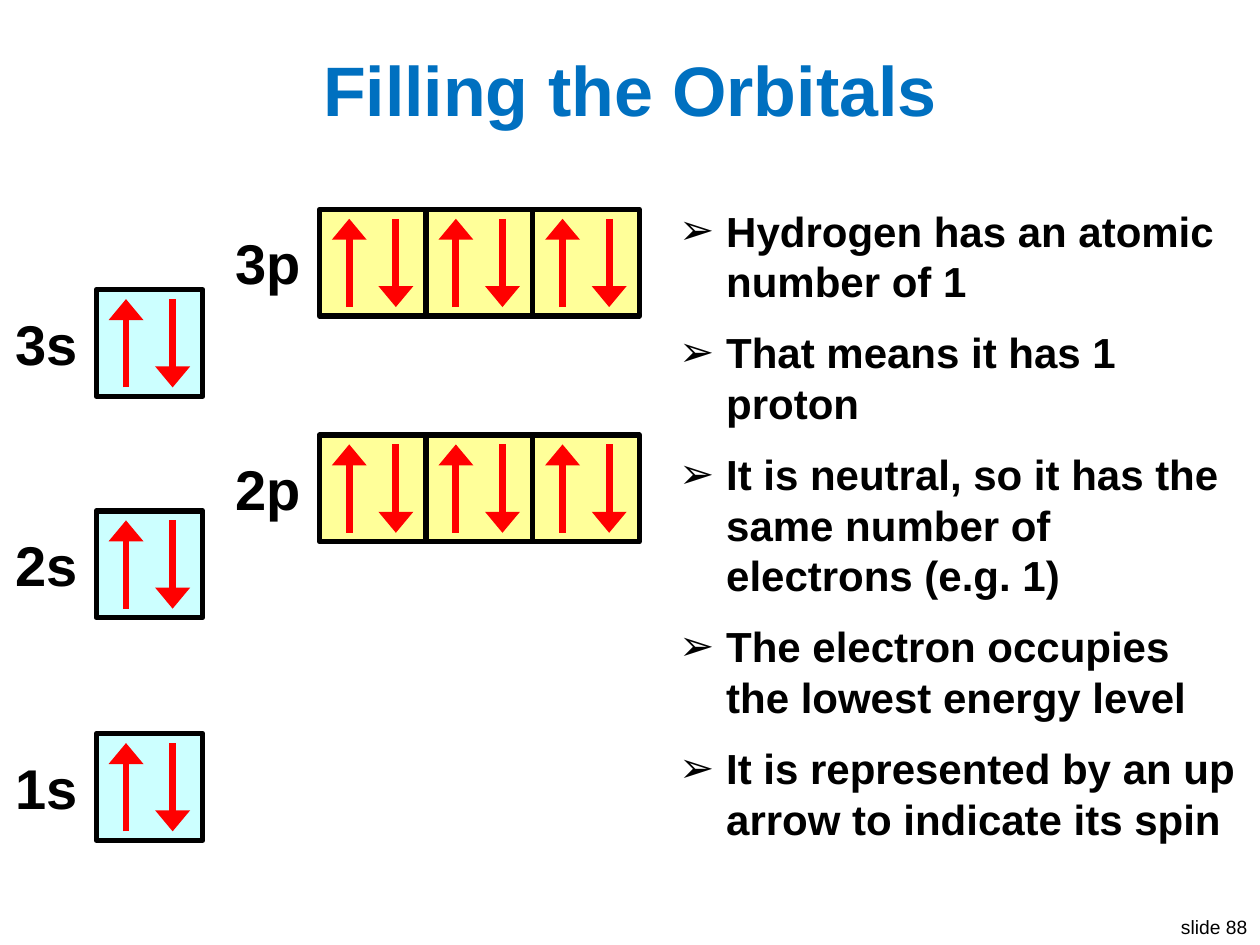
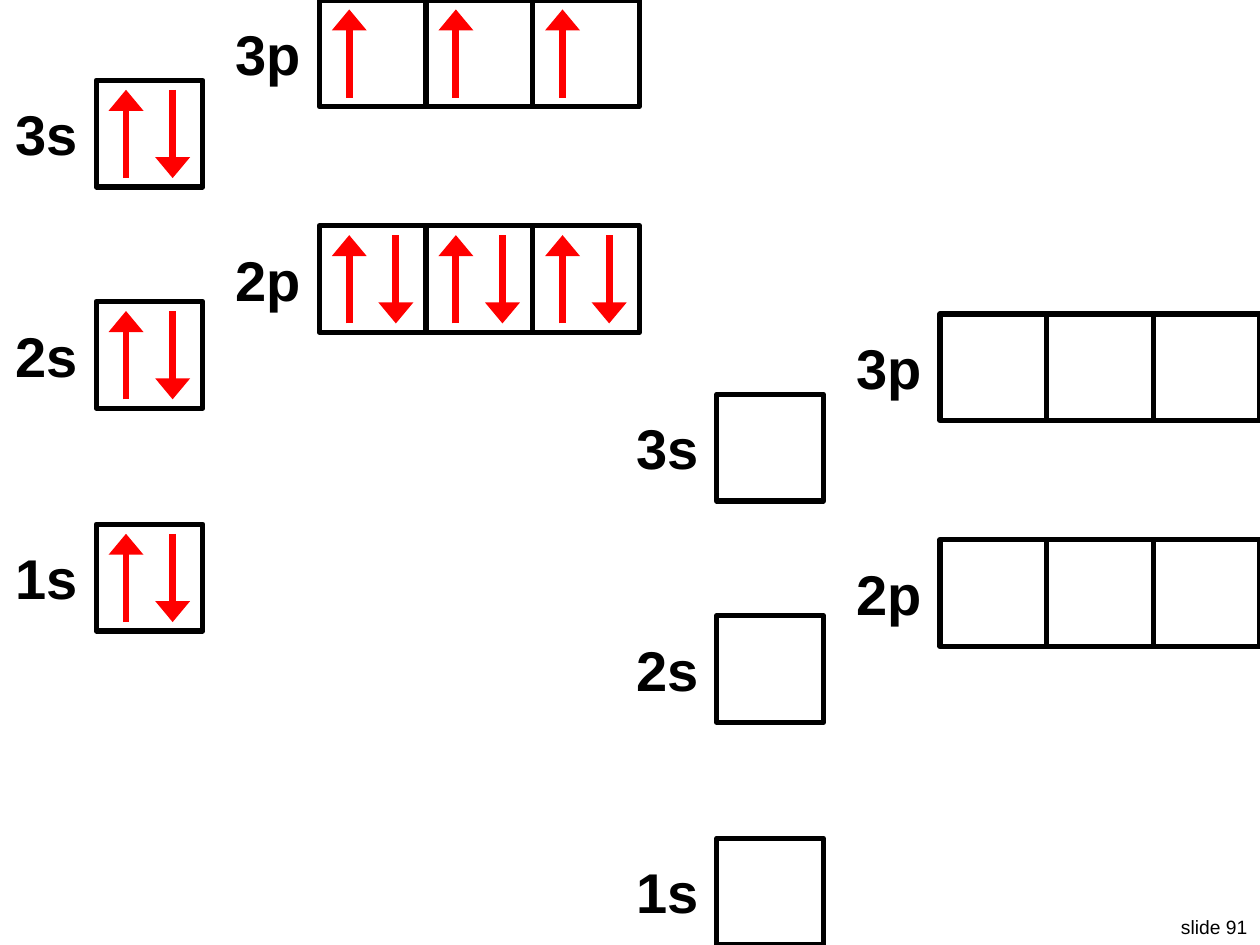
from lxml import etree
from pptx import Presentation
from pptx import util as u
from pptx.dml.color import RGBColor
from pptx.enum import shapes, text
from pptx.oxml import ns

hues = {"title": "0070C0", "ink": "000000", "spin": "FF0000",
        "s": "CCFFFF", "p": "FFFF99", "label": "FFFFFF"}
align = text.PP_ALIGN
fonts = {
    "title": {"size": u.Pt(40), "bold": True},
    "body": {"size": u.Pt(24), "bold": True},
    "label": {"size": u.Pt(32), "bold": True},
    "foot": {"size": u.Pt(11), "bold": False},
}
paras = {
    "title": {"alignment": align.CENTER},
    "body": {"alignment": align.LEFT, "space_before": u.Pt(12)},
    "label": {"alignment": align.RIGHT},
    "foot": {"alignment": align.RIGHT},
}
frames = {
    "title": {"word_wrap": True, "vertical_anchor": text.MSO_ANCHOR.MIDDLE},
    "body": {"word_wrap": True},
    "label": {"word_wrap": False},
    "foot": {"word_wrap": False},
}

# Sublevels: name, left and top within a diagram (cm), number of boxes
levels = [("3s", 1.94, 1.62, 1), ("2s", 1.94, 6.08, 1), ("1s", 1.94, 10.57, 1),
          ("2p", 6.44, 4.55, 3), ("3p", 6.44, 0, 3)]
side = 2.15
widths = {"s": 1.78, "p": 1.84}
full = {"1s": 2, "2s": 2, "2p": 6, "3s": 2, "3p": 6}

# Slides: number, title, bullets, diagrams (left, top, tinted, electrons)
pages = [
    (88, "Filling the Orbitals",
     ["Hydrogen has an atomic number of 1",
      "That means it has 1 proton",
      "It is neutral, so it has the same number of electrons (e.g. 1)",
      "The electron occupies the lowest energy level",
      "It is represented by an up arrow to indicate its spin"],
     [(0, 4.22, True, full)]),
    (91, None, [],
     [(0, 0, False, {**full, "3p": 3}), (12.51, 6.33, False, {})]),
]


def write(home, kind, lines, left, top, wide, high):
    """Add a text box in one of the shared text styles."""
    box = home.add_textbox(u.Cm(left), u.Cm(top), u.Cm(wide), u.Cm(high))
    frame = box.text_frame
    frame.text = "\n".join(lines)
    for key, val in frames[kind].items():
        setattr(frame, key, val)
    for para in frame.paragraphs:
        for key, val in paras[kind].items():
            setattr(para, key, val)
        font = para.runs[0].font
        for key, val in fonts[kind].items():
            setattr(font, key, val)
        font.name = "Arial"
        font.color.rgb = RGBColor.from_string(hues["title" if kind == "title" else "ink"])
    return box


def spin(home, x, start, end):
    """Add a vertical electron arrow with a broad head."""
    arrow = home.add_connector(shapes.MSO_CONNECTOR.STRAIGHT,
                               u.Cm(x), u.Cm(start), u.Cm(x), u.Cm(end))
    arrow.line.width = u.Pt(4)
    arrow.line.color.rgb = RGBColor.from_string(hues["spin"])
    tip = etree.SubElement(arrow.line._get_or_add_ln(), ns.qn("a:tailEnd"))
    tip.set("type", "triangle")
    tip.set("w", "lg")
    etree.SubElement(arrow._element.spPr, ns.qn("a:effectLst"))


deck = Presentation()
deck.slide_width, deck.slide_height = u.Cm(25.4), u.Cm(19.05)

for num, title, points, charts in pages:
    slide = deck.slides.add_slide(deck.slide_layouts[6])

    # Footer and title
    write(slide.shapes, "foot", [f"slide {num}"], 23.5, 18.32, 1.9, 0.73)
    if title:
        write(slide.shapes, "title", [title], 0.5, 0.76, 24.4, 2.03)

    # Bullets
    if points:
        body = write(slide.shapes, "body", points, 13.44, 4.01, 11.73, 13.13)
        for para in body.text_frame.paragraphs:
            props = para._p.get_or_add_pPr()
            props.set("marL", str(u.Cm(0.95)))
            props.set("indent", str(-u.Cm(0.95)))
            etree.SubElement(props, ns.qn("a:buFont")).set("typeface", "Arial")
            etree.SubElement(props, ns.qn("a:buChar")).set("char", "➢")

    # Orbital diagrams
    for left, top, tinted, filled in charts:
        group = slide.shapes.add_group_shape().shapes
        for name, dx, dy, count in levels:
            x, y = left + dx, top + dy
            wide = widths[name[1]]
            label = write(group, "label", [name], x - 0.12 - wide, y + 0.27, wide, 1.62)
            cells = [group.add_shape(shapes.MSO_SHAPE.RECTANGLE, u.Cm(x + i * side),
                                     u.Cm(y), u.Cm(side), u.Cm(side))
                     for i in range(count)]
            for cell in cells:
                cell.shadow.inherit = False
                cell.line.width = u.Pt(3)
                cell.line.color.rgb = RGBColor.from_string(hues["ink"])
            for part, hue in [(label, "label")] + [(cell, name[1]) for cell in cells]:
                if tinted:
                    part.fill.solid()
                    part.fill.fore_color.rgb = RGBColor.from_string(hues[hue])
                else:
                    part.fill.background()

            # Each box gets an up arrow before any box gets a down arrow
            for n in range(filled.get(name, 0)):
                down, i = divmod(n, count)
                ends = (y + 0.19, y + 1.97) if down else (y + 1.97, y + 0.19)
                spin(group, x + i * side + (1.54 if down else 0.6), *ends)

deck.save("out.pptx")
